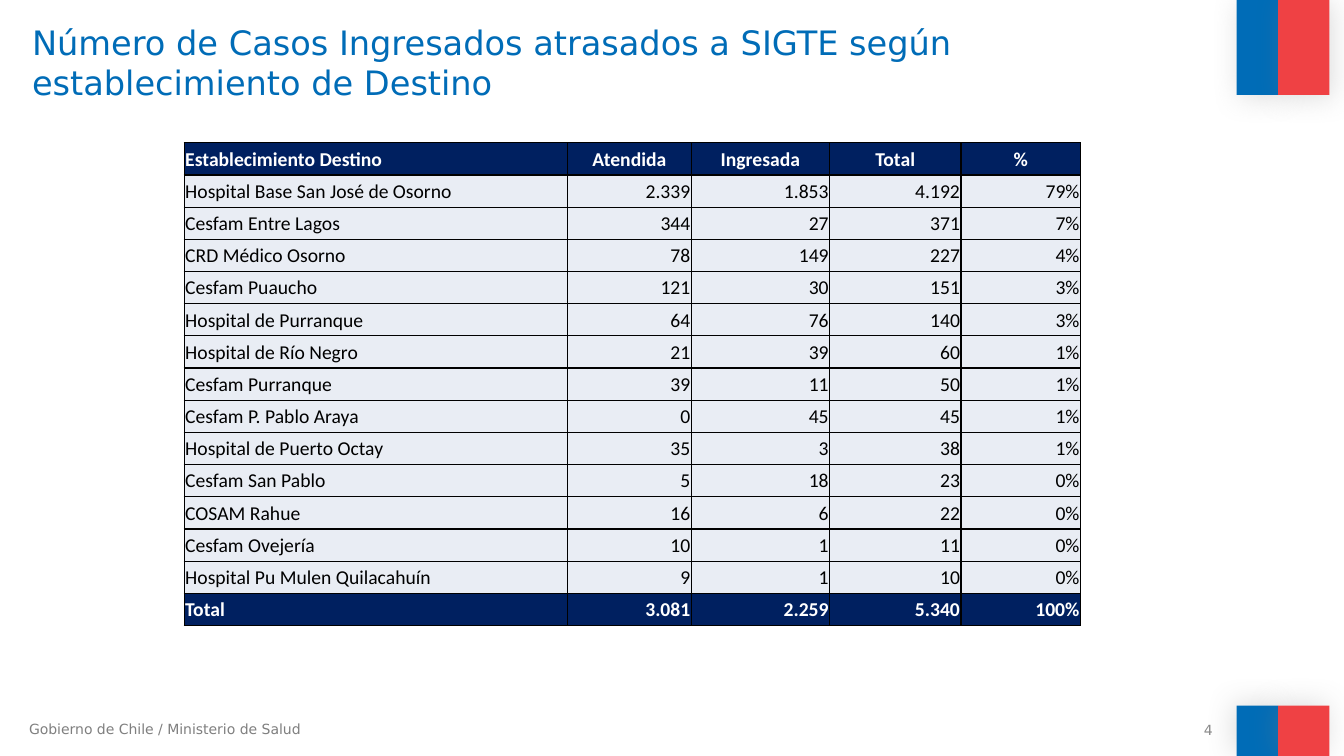
import lxml.etree
import pptx
import pptx.dml.color
import pptx.enum.shapes
import pptx.enum.text
import pptx.oxml.ns
import pptx.util

Pt = pptx.util.Pt
qn = pptx.oxml.ns.qn
ALIGN = pptx.enum.text.PP_ALIGN
ANCHOR = pptx.enum.text.MSO_ANCHOR

BLUE, RED, NAVY, PALE = "006CB7", "EF4144", "002060", "E9EDF4"
WHITE, BLACK = "FFFFFF", "000000"

COLUMN_WIDTHS = [273.8, 88.4, 98.8, 93.8, 85.4]
ROW_HEIGHT = 23
HEADER = ["Establecimiento Destino", "Atendida", "Ingresada", "Total", "%"]
CASES = [
    ["Hospital Base San José de Osorno", "2.339", "1.853", "4.192", "79%"],
    ["Cesfam Entre Lagos", "344", "27", "371", "7%"],
    ["CRD Médico Osorno", "78", "149", "227", "4%"],
    ["Cesfam Puaucho", "121", "30", "151", "3%"],
    ["Hospital de Purranque", "64", "76", "140", "3%"],
    ["Hospital de Río Negro", "21", "39", "60", "1%"],
    ["Cesfam Purranque", "39", "11", "50", "1%"],
    ["Cesfam P. Pablo Araya", "0", "45", "45", "1%"],
    ["Hospital de Puerto Octay", "35", "3", "38", "1%"],
    ["Cesfam San Pablo", "5", "18", "23", "0%"],
    ["COSAM Rahue", "16", "6", "22", "0%"],
    ["Cesfam Ovejería", "10", "1", "11", "0%"],
    ["Hospital Pu Mulen Quilacahuín", "9", "1", "10", "0%"],
]
TOTALS = ["Total", "3.081", "2.259", "5.340", "100%"]


def color(hex_code):
    return pptx.dml.color.RGBColor.from_string(hex_code)


def add_xml(parent, tag, **attributes):
    return lxml.etree.SubElement(parent, qn(tag), attributes)


class SlideBuilder:
    heading_font = "DejaVu Sans"
    table_font = "Calibri"

    def __init__(self, slide):
        self.slide = slide

    def set_text(self, text_frame, text, size, hex_code, font_name, align, bold=False):
        text_frame.text = text
        paragraph = text_frame.paragraphs[0]
        paragraph.alignment = align
        font = paragraph.runs[0].font
        font.name, font.size, font.bold = font_name, Pt(size), bold
        font.color.rgb = color(hex_code)

    def text(self, box, text, size, hex_code, align=ALIGN.LEFT, anchor=ANCHOR.TOP):
        text_frame = self.slide.shapes.add_textbox(*map(Pt, box)).text_frame
        text_frame.word_wrap = True
        text_frame.vertical_anchor = anchor
        self.set_text(text_frame, text, size, hex_code, self.heading_font, align)

    def flag_block(self, box, hex_code, shadow_angle):
        """Add a borderless rectangle with a soft grey shadow."""
        shape = self.slide.shapes.add_shape(
            pptx.enum.shapes.MSO_SHAPE.RECTANGLE, *map(Pt, box))
        shape.fill.solid()
        shape.fill.fore_color.rgb = color(hex_code)
        shape.line.fill.background()
        shape.shadow.inherit = False
        effects = shape._element.spPr.find(qn("a:effectLst"))
        shadow = add_xml(effects, "a:outerShdw", blurRad=str(Pt(20)), dist=str(Pt(3)),
                         dir=str(shadow_angle * 60000), rotWithShape="0")
        shade = add_xml(shadow, "a:srgbClr", val="808080")
        add_xml(shade, "a:alpha", val="25000")

    def borders(self, cell):
        properties = cell._tc.get_or_add_tcPr()
        for side in ("a:lnL", "a:lnR", "a:lnT", "a:lnB"):
            line = add_xml(properties, side, w=str(Pt(1)))
            add_xml(add_xml(line, "a:solidFill"), "a:srgbClr", val=BLACK)

    def cell(self, cell, text, align, emphasized):
        cell.margin_left = cell.margin_right = cell.margin_top = Pt(0.7)
        cell.margin_bottom = Pt(0)
        cell.vertical_anchor = ANCHOR.MIDDLE
        self.borders(cell)
        cell.fill.solid()
        cell.fill.fore_color.rgb = color(NAVY if emphasized else PALE)
        self.set_text(cell.text_frame, text, 14, WHITE if emphasized else BLACK,
                      self.table_font, align, emphasized)

    def table(self, left, top, rows):
        """Add a table whose first and last rows are emphasized."""
        table = self.slide.shapes.add_table(
            len(rows), len(COLUMN_WIDTHS), Pt(left), Pt(top),
            Pt(sum(COLUMN_WIDTHS)), Pt(ROW_HEIGHT * len(rows))).table
        table.horz_banding = False
        for column, width in zip(table.columns, COLUMN_WIDTHS):
            column.width = Pt(width)
        last = len(rows) - 1
        for row_index, values in enumerate(rows):
            table.rows[row_index].height = Pt(ROW_HEIGHT)
            value_align = ALIGN.CENTER if row_index == 0 else ALIGN.RIGHT
            for column_index, value in enumerate(values):
                align = value_align if column_index else ALIGN.LEFT
                self.cell(table.cell(row_index, column_index), value, align,
                          row_index in (0, last))


def main():
    presentation = pptx.Presentation()
    presentation.slide_width, presentation.slide_height = Pt(960), Pt(540)
    builder = SlideBuilder(presentation.slides.add_slide(presentation.slide_layouts[6]))

    for top, height, shadow_angle in ((0, 67.8, 45), (504, 36, 215)):
        builder.flag_block((883.4, top, 29.6, height), BLUE, shadow_angle)
        builder.flag_block((913, top, 36.6, height), RED, shadow_angle)

    builder.text((13.7, 511.2, 290.2, 19.4), "Gobierno de Chile / Ministerio de Salud",
                 10, "7F7F7F")
    builder.text((15.8, 12.2, 857.5, 90),
                 "Número de Casos Ingresados atrasados a SIGTE según establecimiento de Destino",
                 24, BLUE)
    builder.text((649.4, 514.1, 223.9, 15.1), "4", 10, "898989",
                 ALIGN.RIGHT, ANCHOR.MIDDLE)
    builder.table(131.6, 102, [HEADER, *CASES, TOTALS])
    presentation.save("out.pptx")


if __name__ == "__main__":
    main()
